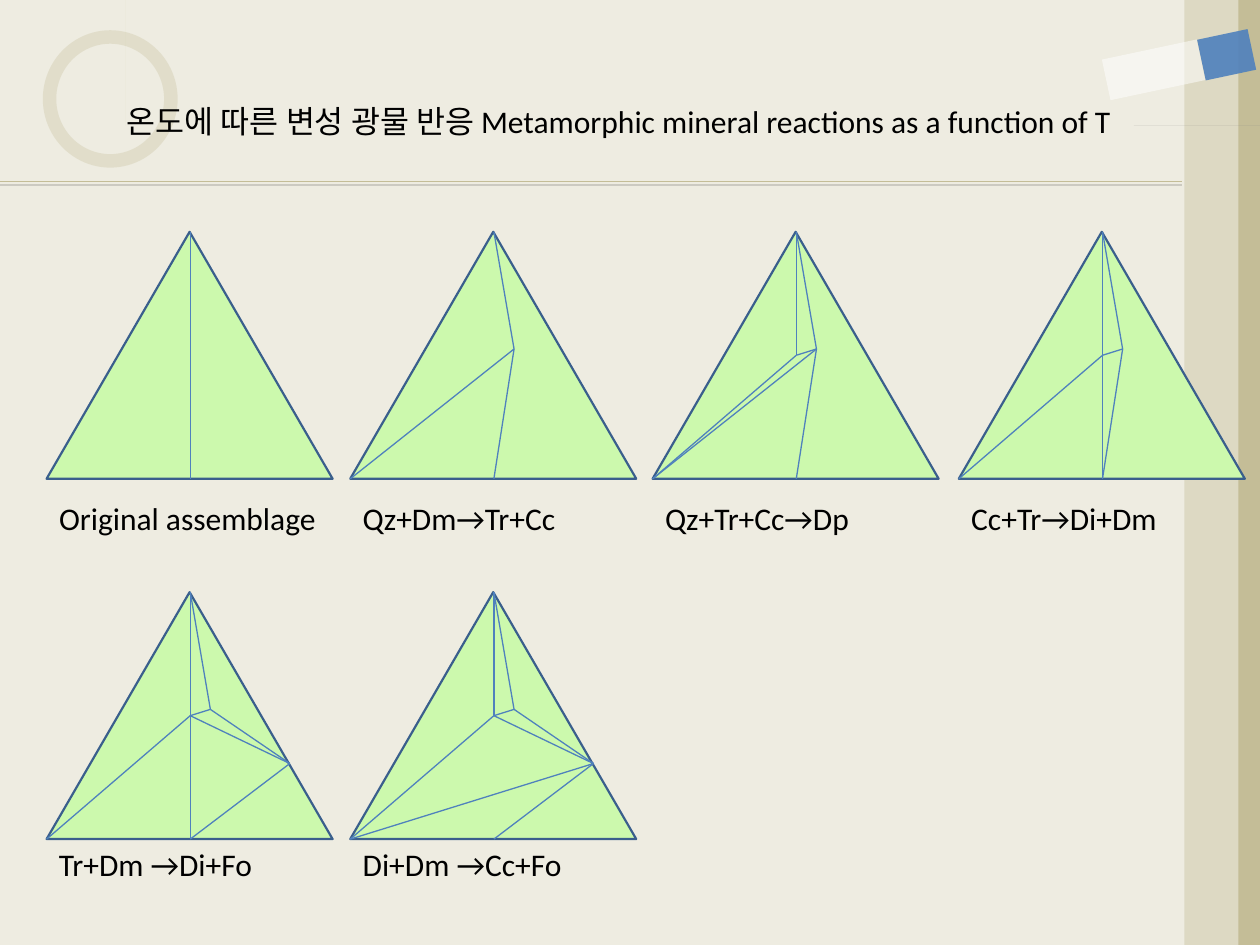
from dataclasses import dataclass
from typing import Optional

from lxml import etree
from pptx import Presentation
from pptx import util as u
from pptx.dml.color import RGBColor
from pptx.enum import shapes, text
from pptx.oxml.ns import qn

Point = tuple[float, float]
Box = tuple[float, float, float, float]


@dataclass(frozen=True)
class Theme:
    paper: str = "EEECE1"
    tan: str = "C4BD97"
    light_tan: str = "DDD9C3"
    grey: str = "808080"
    white: str = "FFFFFF"
    blue: str = "4F81BD"
    dark_blue: str = "3A5F8C"
    green: str = "CCF9AD"
    ink: str = "000000"
    font: str = "Calibri"
    size: float = 18
    thin: float = 0.75
    outline: float = 1.25


@dataclass(frozen=True)
class Panel:
    left: float
    top: float
    caption: str
    caption_top: float
    caption_width: float
    tie_lines: tuple[str, ...]


THEME = Theme()
SIDE, HEIGHT = 2.27, 1.96
NODES: dict[str, Point] = {
    "apex": (1.14, 0),
    "left": (0, HEIGHT),
    "base": (1.14, HEIGHT),
    "upper": (1.3, 0.93),
    "centre": (1.14, 0.98),
    "side": (1.93, 1.36),
}
COLUMNS = (0.37, 2.78, 5.18, 7.61)
ROWS = (1.84, 4.7)
CAPTIONS = (3.91, 6.66)
PANELS = (
    Panel(COLUMNS[0], ROWS[0], "Original assemblage", CAPTIONS[0], 2.32, ("apex base",)),
    Panel(COLUMNS[1], ROWS[0], "Qz+Dm→Tr+Cc", CAPTIONS[0], 1.85,
          ("upper left", "apex upper", "base upper")),
    Panel(COLUMNS[2], ROWS[0], "Qz+Tr+Cc→Dp", CAPTIONS[0], 1.78,
          ("upper left", "apex upper", "base upper", "centre upper",
           "left centre", "centre apex")),
    Panel(COLUMNS[3], ROWS[0], "Cc+Tr→Di+Dm", CAPTIONS[0], 1.78,
          ("apex upper", "centre upper", "left centre", "centre apex",
           "centre base", "upper base")),
    Panel(COLUMNS[0], ROWS[1], "Tr+Dm →Di+Fo", CAPTIONS[1], 1.84,
          ("apex upper", "centre upper", "left centre", "centre apex",
           "upper side", "side base", "centre side", "centre base")),
    Panel(COLUMNS[1], ROWS[1], "Di+Dm →Cc+Fo", CAPTIONS[1], 1.89,
          ("apex upper", "centre upper", "left centre", "centre apex",
           "left side", "upper side", "side base", "centre side")),
)
ARROW = (
    (1.18, 0.73), (1.12, 0.68, 0.92, 0.51, 0.85, 0.47),
    (0.81, 0.46, 0.79, 0.48, 0.76, 0.5), (0.73, 0.52, 0.72, 0.57, 0.75, 0.61),
    (0.84, 0.69), (0.61, 0.69), (0.55, 0.71, 0.54, 0.76, 0.54, 0.79),
    (0.53, 0.83, 0.56, 0.88, 0.61, 0.89), (0.86, 0.89), (0.74, 0.99),
    (0.73, 1.02, 0.73, 1.07, 0.75, 1.09), (0.77, 1.11, 0.8, 1.13, 0.84, 1.13),
    (1.01, 0.99, 1.19, 0.85, 1.19, 0.85), (1.21, 0.82, 1.2, 0.81, 1.2, 0.79),
    (1.2, 0.77, 1.2, 0.75, 1.18, 0.73),
)
CURL = (
    (9.9, 0.57), (9.93, 0.69), (9.28, 0.68, 9.15, 0.76, 8.85, 0.8),
    (9.2, 0.72, 9.55, 0.65, 9.9, 0.57),
)


def rgb(colour: str) -> RGBColor:
    return RGBColor.from_string(colour)


def paint(shape, colour: str, opacity: int = 100, outline: Optional[str] = None) -> None:
    shape.shadow.inherit = False
    shape.fill.solid()
    shape.fill.fore_color.rgb = rgb(colour)
    if opacity < 100:
        tint = shape._element.spPr.find(qn("a:solidFill"))[0]
        etree.SubElement(tint, qn("a:alpha")).set("val", str(opacity * 1000))
    if outline:
        shape.line.color.rgb = rgb(outline)
        shape.line.width = u.Pt(THEME.outline)
    else:
        shape.line.fill.background()


def add_preset(slide, kind, box: Box, colour: str, opacity: int = 100,
               outline: Optional[str] = None, turn: float = 0):
    shape = slide.shapes.add_shape(kind, *(u.Inches(v) for v in box))
    shape.rotation = turn
    paint(shape, colour, opacity, outline)
    return shape


def add_outline(slide, segments: tuple, colour: str, opacity: int) -> None:
    points: list[Point] = [segments[0]]
    for segment in segments[1:]:
        if len(segment) == 2:
            points.append(segment)
            continue
        controls = (points[-1], segment[:2], segment[2:4], segment[4:])
        for step in range(1, 9):
            t = step / 8
            weights = ((1 - t) ** 3, 3 * t * (1 - t) ** 2, 3 * t * t * (1 - t), t ** 3)
            points.append((sum(w * c[0] for w, c in zip(weights, controls)),
                           sum(w * c[1] for w, c in zip(weights, controls))))
    builder = slide.shapes.build_freeform(*points[0], scale=u.Inches(1))
    builder.add_line_segments(points[1:], close=True)
    paint(builder.convert_to_shape(), colour, opacity)


def add_line(slide, start: Point, end: Point, colour: str):
    line = slide.shapes.add_connector(
        shapes.MSO_CONNECTOR.STRAIGHT, *(u.Inches(v) for v in start + end))
    line.line.color.rgb = rgb(colour)
    line.line.width = u.Pt(THEME.thin)
    return etree.SubElement(line._element.spPr, qn("a:effectLst"))


def add_text(slide, words: str, box: Box) -> None:
    label = slide.shapes.add_textbox(*(u.Inches(v) for v in box))
    frame = label.text_frame
    frame.text = words
    frame.word_wrap = False
    frame.auto_size = text.MSO_AUTO_SIZE.SHAPE_TO_FIT_TEXT
    font = frame.paragraphs[0].runs[0].font
    font.name, font.size = THEME.font, u.Pt(THEME.size)
    font.color.rgb = rgb(THEME.ink)


def add_decor(slide) -> None:
    preset = shapes.MSO_SHAPE
    effects = add_line(slide, (0, 1.44), (9.38, 1.44), THEME.tan)
    shadow = etree.SubElement(effects, qn("a:outerShdw"), dist=str(u.Pt(2)),
                              dir="5400000", algn="t", rotWithShape="0")
    shade = etree.SubElement(shadow, qn("a:srgbClr"), val=THEME.ink)
    etree.SubElement(shade, qn("a:alpha"), val="22000")

    add_outline(slide, ARROW, THEME.tan, 30)
    ring = add_preset(slide, preset.DONUT, (0.34, 0.24, 1.07, 1.09), THEME.tan, 30)
    ring.adjustments[0] = 0.1
    add_preset(slide, preset.RECTANGLE, (9.41, 0, 0.59, 7.5), THEME.tan)
    add_preset(slide, preset.RECTANGLE, (9.4, 0, 0.43, 7.5), THEME.light_tan)
    add_outline(slide, CURL, THEME.grey, 90)
    add_preset(slide, preset.RECTANGLE, (9.57, 0.23, 0.33, 0.41), THEME.blue, 90, turn=78)
    add_preset(slide, preset.RECTANGLE, (8.99, 0.17, 0.33, 0.77), THEME.white, 50, turn=78)


def add_panel(slide, panel: Panel) -> None:
    add_preset(slide, shapes.MSO_SHAPE.ISOSCELES_TRIANGLE,
               (panel.left, panel.top, SIDE, HEIGHT), THEME.green, outline=THEME.dark_blue)
    for tie_line in panel.tie_lines:
        start, end = ((panel.left + NODES[n][0], panel.top + NODES[n][1])
                      for n in tie_line.split())
        add_line(slide, start, end, THEME.blue)
    add_text(slide, panel.caption, (panel.left, panel.caption_top, panel.caption_width, 0.4))


def main() -> None:
    deck = Presentation()
    deck.slide_width, deck.slide_height = u.Inches(10), u.Inches(7.5)
    slide = deck.slides.add_slide(deck.slide_layouts[6])
    slide.background.fill.solid()
    slide.background.fill.fore_color.rgb = rgb(THEME.paper)
    add_decor(slide)
    for panel in PANELS:
        add_panel(slide, panel)
    add_text(slide, "온도에 따른 변성 광물 반응 Metamorphic mineral reactions as a function of T",
             (0.91, 0.76, 8.26, 0.4))
    deck.save("out.pptx")


if __name__ == "__main__":
    main()
